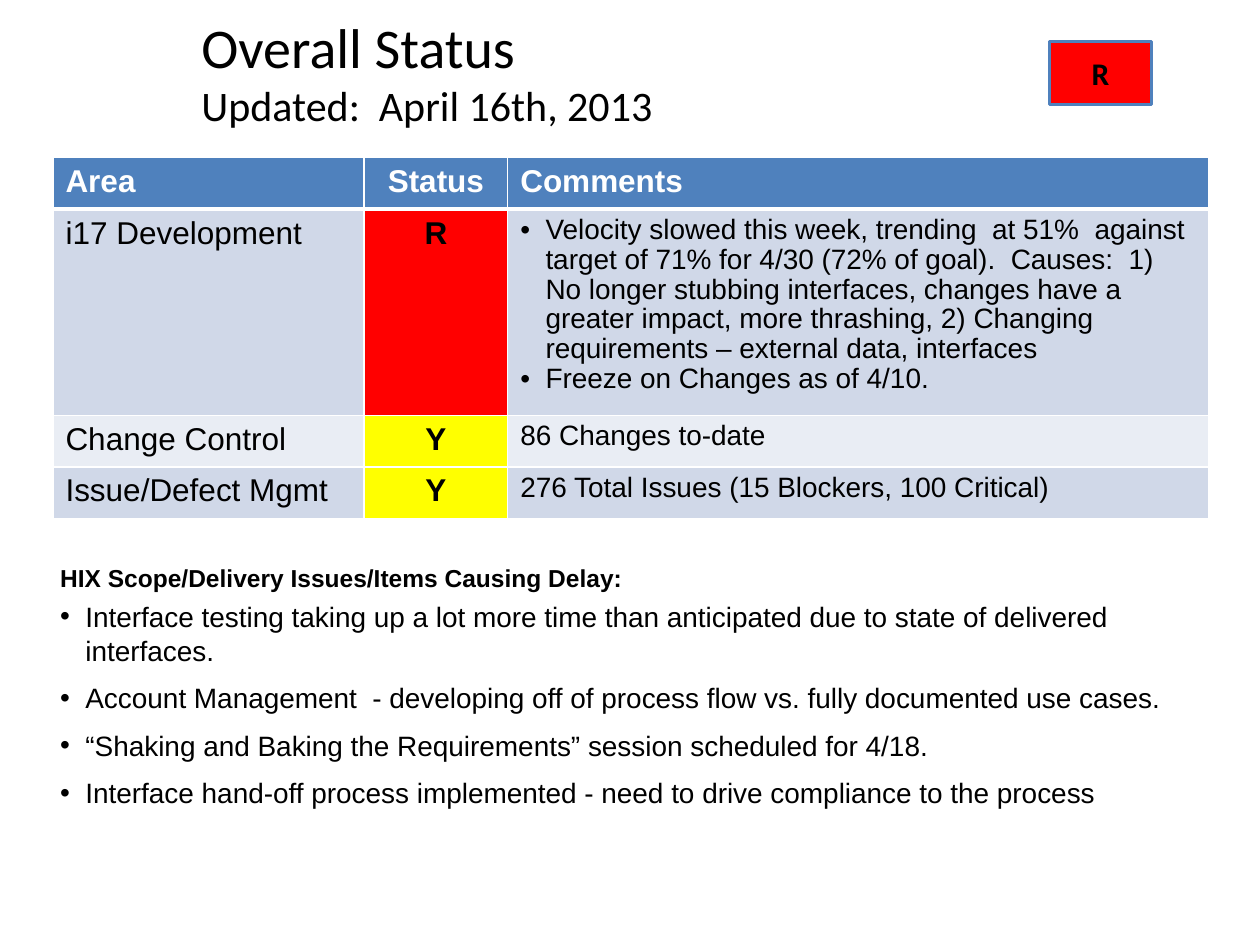
from dataclasses import dataclass

from lxml import etree
from pptx import Presentation
from pptx.dml.color import RGBColor
from pptx.enum.shapes import MSO_SHAPE
from pptx.enum.text import MSO_ANCHOR, PP_ALIGN
from pptx.oxml.ns import qn
from pptx.util import Inches, Pt

RECT = MSO_SHAPE.RECTANGLE
LEFT, CENTER = PP_ALIGN.LEFT, PP_ALIGN.CENTER
TOP, MIDDLE, BOTTOM = MSO_ANCHOR.TOP, MSO_ANCHOR.MIDDLE, MSO_ANCHOR.BOTTOM


@dataclass(frozen=True)
class Theme:
    heading_font: str = "Calibri"
    body_font: str = "Arial"
    black: str = "000000"
    white: str = "FFFFFF"
    blue: str = "4F81BD"
    red: str = "FF0000"
    yellow: str = "FFFF00"
    band_dark: str = "D0D8E8"
    band_light: str = "E9EDF4"
    title: int = 32
    subtitle: int = 24
    label: int = 18
    body: int = 16
    note: int = 14


THEME = Theme()
STATUS_FILLS = {"R": THEME.red, "Y": THEME.yellow}


def add_bullet(p):
    pPr = p._p.get_or_add_pPr()
    pPr.set("marL", str(Inches(0.2)))
    pPr.set("indent", str(-Inches(0.2)))
    font = etree.SubElement(pPr, qn("a:buFont"))
    font.set("typeface", THEME.body_font)
    etree.SubElement(pPr, qn("a:buChar")).set("char", "•")


def write(tf, text, *, size=THEME.body, font=THEME.body_font, color=THEME.black,
          bold=False, align=LEFT, bullet=False, gap=None, spacing=None, new=False):
    p = tf.add_paragraph() if new else tf.paragraphs[0]
    if bullet:
        add_bullet(p)
    p.alignment = align
    if gap is not None:
        p.space_before = p.space_after = Pt(gap)
    if spacing is not None:
        p.line_spacing = spacing
    r = p.add_run()
    r.text = text
    r.font.size = Pt(size)
    r.font.name = font
    r.font.bold = bold
    r.font.color.rgb = RGBColor.from_string(color)


def set_border(cell, side, width):
    ln = etree.SubElement(cell._tc.get_or_add_tcPr(), qn(f"a:ln{side}"))
    ln.set("w", str(Pt(width)))
    fill = etree.SubElement(ln, qn("a:solidFill"))
    etree.SubElement(fill, qn("a:srgbClr")).set("val", THEME.white)


class StatusSlide:
    def __init__(self, prs, theme):
        self.theme = theme
        self.s = prs.slides.add_slide(prs.slide_layouts[6])

    def badge(self, text, x, y, w, h):
        t = self.theme
        sp = self.s.shapes.add_shape(RECT, Inches(x), Inches(y), Inches(w), Inches(h))
        sp.shadow.inherit = False
        sp.fill.solid()
        sp.fill.fore_color.rgb = RGBColor.from_string(STATUS_FILLS[text])
        sp.line.color.rgb = RGBColor.from_string(t.blue)
        sp.line.width = Pt(1.5)
        sp.text_frame.vertical_anchor = MIDDLE
        write(sp.text_frame, text, size=t.label, font=t.heading_font, bold=True, align=CENTER)

    def text_box(self, x, y, w, h, anchor=TOP):
        sp = self.s.shapes.add_textbox(Inches(x), Inches(y), Inches(w), Inches(h))
        tf = sp.text_frame
        tf.word_wrap = True
        tf.vertical_anchor = anchor
        return tf

    def title(self, title, subtitle, x, y, w, h):
        t = self.theme
        tf = self.text_box(x, y, w, h, BOTTOM)
        write(tf, title, size=t.title, font=t.heading_font)
        write(tf, subtitle, size=t.subtitle, font=t.heading_font, new=True)

    def issues(self, heading, items, x, y, w, h):
        tf = self.text_box(x, y, w, h)
        write(tf, heading, size=self.theme.note, bold=True)
        for item in items:
            write(tf, item, bullet=True, gap=4, new=True)

    def cell(self, cell, fill, first_row, second_row):
        for side in "LRTB":
            thick = (first_row and side == "B") or (second_row and side == "T")
            set_border(cell, side, 3 if thick else 1)
        cell.fill.solid()
        cell.fill.fore_color.rgb = RGBColor.from_string(fill)
        return cell.text_frame

    def table(self, header, rows, x, y, widths, heights):
        t = self.theme
        frame = self.s.shapes.add_table(len(heights), len(widths), Inches(x), Inches(y),
                                        Inches(sum(widths)), Inches(sum(heights)))
        table = frame.table
        table.horz_banding = False
        for col, width in zip(table.columns, widths):
            col.width = Inches(width)
        for row, height in zip(table.rows, heights):
            row.height = Inches(height)
        for c, text in enumerate(header):
            tf = self.cell(table.cell(0, c), t.blue, True, False)
            write(tf, text, size=t.label, color=t.white, bold=True,
                  align=CENTER if c == 1 else LEFT)
        for n, (area, status, comments) in enumerate(rows, 1):
            band = t.band_dark if n % 2 else t.band_light
            fills = (band, STATUS_FILLS[status], band)
            tfs = [self.cell(table.cell(n, c), fill, False, n == 1)
                   for c, fill in enumerate(fills)]
            write(tfs[0], area, size=t.label)
            write(tfs[1], status, size=t.label, bold=True, align=CENTER)
            for i, comment in enumerate(comments):
                write(tfs[2], comment, bullet=len(comments) > 1, spacing=0.96, new=i > 0)


def main():
    prs = Presentation()
    prs.slide_width, prs.slide_height = Inches(10), Inches(7.5)
    slide = StatusSlide(prs, THEME)
    slide.badge("R", 8.33, 0.33, 0.81, 0.5)
    slide.title("Overall Status", "Updated:  April 16th, 2013", 1.5, 0.5, 5.25, 0.58)
    slide.table(
        ("Area", "Status", "Comments"),
        [
            ("i17 Development", "R", [
                "Velocity slowed this week, trending  at 51%  against target of 71% for 4/30 "
                "(72% of goal).  Causes:  1) No longer stubbing interfaces, changes have a "
                "greater impact, more thrashing, 2) Changing requirements – external data, "
                "interfaces",
                "Freeze on Changes as of 4/10.",
            ]),
            ("Change Control", "Y", ["86 Changes to-date"]),
            ("Issue/Defect Mgmt", "Y", ["276 Total Issues (15 Blockers, 100 Critical)"]),
        ],
        0.42, 1.25, (2.47, 1.14, 5.56), (0.41, 1.57, 0.41, 0.41))
    slide.issues(
        "HIX Scope/Delivery Issues/Items Causing Delay:",
        [
            "Interface testing taking up a lot more time than anticipated due to state of "
            "delivered interfaces.",
            "Account Management  - developing off of process flow vs. fully documented use cases.",
            "“Shaking and Baking the Requirements” session scheduled for 4/18.",
            "Interface hand-off process implemented - need to drive compliance to the process",
        ],
        0.38, 4.42, 9.2, 2.08)
    prs.save("out.pptx")


if __name__ == "__main__":
    main()
